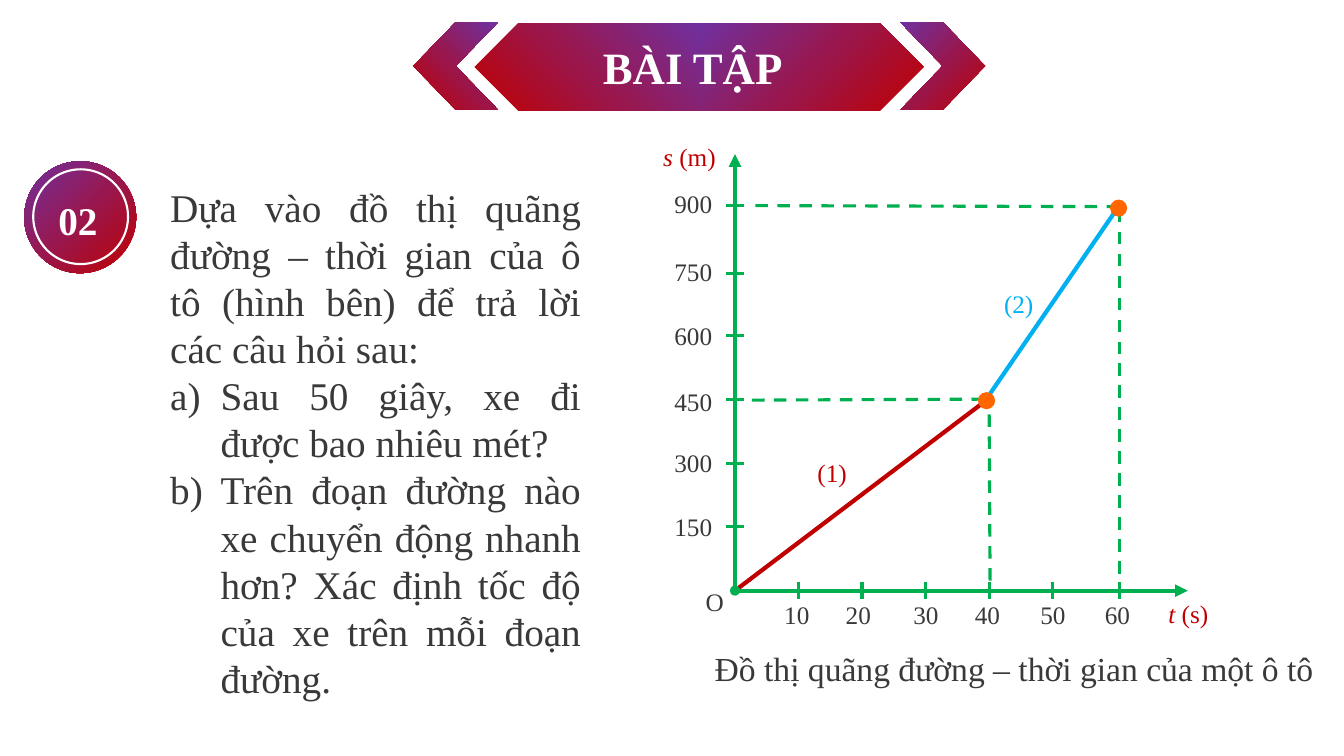
from dataclasses import dataclass

from copy import deepcopy
from lxml.etree import SubElement
from pptx import Presentation
from pptx.dml.color import RGBColor
from pptx.enum.dml import MSO_LINE
from pptx.enum.shapes import MSO_CONNECTOR, MSO_SHAPE
from pptx.enum.text import PP_ALIGN
from pptx.oxml.ns import qn
from pptx.util import Pt

SCALE = 9144


@dataclass(frozen=True)
class Theme:
    font: str = "Times New Roman"
    white: str = "FFFFFF"
    ink: str = "3B3838"
    red: str = "C00000"
    plum: str = "9B164A"
    purple: str = "7030A0"
    green: str = "00B050"
    blue: str = "00B0F0"
    orange: str = "FF6600"
    title: int = 32
    body: int = 28
    caption: int = 24
    label: int = 18
    thick: float = 3
    thin: float = 2.25
    ring: float = 1.5


class Painter:
    """Draws themed elements on one page, with lengths in hundredths of an inch."""

    def __init__(self, page, theme):
        self.page = page
        self.theme = theme

    def shape(self, kind, left, top, width, height, fill=None, outline=None, flip=False):
        box = [length * SCALE for length in (left, top, width, height)]
        shape = self.page.shapes.add_shape(kind, *box)
        shape.shadow.inherit = False
        if fill:
            shape.fill.solid()
            shape.fill.fore_color.rgb = RGBColor.from_string(fill)
        else:
            shape.fill.background()
        if outline:
            shape.line.color.rgb = RGBColor.from_string(outline)
            shape.line.width = Pt(self.theme.ring)
        else:
            shape.line.fill.background()
        if flip:
            shape.element.spPr.find(qn("a:xfrm")).set("flipH", "1")
        return shape

    def gradient_shape(self, kind, left, top, width, height, flip=False):
        fill = self.shape(kind, left, top, width, height, flip=flip).fill
        fill.gradient()
        fill.gradient_angle = 135
        stops = fill._fill._gradFill.find(qn("a:gsLst"))
        stops.insert(1, deepcopy(stops[0]))
        colors = (self.theme.red, self.theme.plum, self.theme.purple)
        for stop, position, color in zip(fill.gradient_stops, (0, 0.47, 1), colors):
            stop.position = position
            stop.color.rgb = RGBColor.from_string(color)

    def dot(self, center_x, center_y, size, color):
        corner = (center_x - size // 2, center_y - size // 2)
        self.shape(MSO_SHAPE.OVAL, *corner, size, size, color)

    def line(self, start, end, color, width, dashed=False, arrow=False):
        ends = [length * SCALE for length in (*start, *end)]
        line = self.page.shapes.add_connector(MSO_CONNECTOR.STRAIGHT, *ends)
        line.line.color.rgb = RGBColor.from_string(color)
        line.line.width = Pt(width)
        if dashed:
            line.line.dash_style = MSO_LINE.DASH
        if arrow:
            SubElement(line.line._get_or_add_ln(), qn("a:tailEnd"), type="triangle")
        SubElement(line.element.spPr, qn("a:effectLst"))

    def text(self, left, top, width, height, content, size, color, bold=False, variable=""):
        box = [length * SCALE for length in (left, top, width, height)]
        frame = self.page.shapes.add_textbox(*box).text_frame
        frame.word_wrap = True
        para = frame.paragraphs[0]
        if variable:
            span = para.add_run()
            span.text = variable
            span.font.italic = True
        para.add_run().text = content
        self.style(para, size, color, bold)
        return frame

    def style(self, para, size, color, bold=False):
        para.font.name = self.theme.font
        para.font.size = Pt(size)
        para.font.color.rgb = RGBColor.from_string(color)
        para.font.bold = bold

    def exercise(self, left, top, width, height, intro, questions):
        frame = self.text(left, top, width, height, intro, self.theme.body, self.theme.ink)
        for question in questions:
            para = frame.add_paragraph()
            para.add_run().text = question
            props = para._p.get_or_add_pPr()
            props.set("marL", str(50 * SCALE))
            props.set("indent", str(-50 * SCALE))
            SubElement(props, qn("a:buAutoNum"), type="alphaLcParenR")
            self.style(para, self.theme.body, self.theme.ink)
        for para in frame.paragraphs:
            para.alignment = PP_ALIGN.JUSTIFY


def draw_header(painter, theme):
    painter.gradient_shape(MSO_SHAPE.OVAL, 24, 160, 111, 111)
    painter.shape(MSO_SHAPE.OVAL, 33, 168, 94, 94, outline=theme.white)
    painter.text(48, 190, 64, 57, "02", theme.body, theme.white, bold=True)
    painter.gradient_shape(MSO_SHAPE.PENTAGON, 693, 23, 223, 87)
    painter.gradient_shape(MSO_SHAPE.PENTAGON, 471, 23, 223, 87, flip=True)
    painter.gradient_shape(MSO_SHAPE.CHEVRON, 893, 22, 84, 87)
    painter.gradient_shape(MSO_SHAPE.CHEVRON, 410, 22, 84, 87, flip=True)
    painter.text(588, 34, 211, 64, "BÀI TẬP", theme.title, theme.white, bold=True)


def draw_graph(painter, theme):
    origin, middle, finish = (729, 586), (981, 395), (1110, 204)
    painter.line(origin, middle, theme.red, theme.thick)
    painter.line(origin, (1178, 586), theme.green, theme.thick, arrow=True)
    painter.line(origin, (729, 153), theme.green, theme.thick, arrow=True)
    painter.dot(*origin, 10, theme.green)

    times = zip((792, 855, 918, 981, 1044, 1110), (768, 829, 896, 957, 1022, 1086))
    for step, (tick, left) in enumerate(times, 1):
        painter.line((tick, 577), (tick, 594), theme.green, theme.thin)
        painter.text(left, 590, 63, 40, str(10 * step), theme.label, theme.ink)
    distances = zip((522, 460, 396, 333, 271, 204), (502, 439, 378, 313, 249, 182))
    for step, (tick, top) in enumerate(distances, 1):
        painter.line((720, tick), (738, tick), theme.green, theme.thin)
        painter.text(659, top, 71, 40, str(150 * step), theme.label, theme.ink)

    guides = [
        ((982, 576), middle),
        ((976, 396), (739, 397)),
        ((1110, 569), (1110, 205)),
        ((1110, 205), (747, 204)),
    ]
    for start, end in guides:
        painter.line(start, end, theme.green, theme.thin, dashed=True)
    painter.line((981, 392), finish, theme.blue, theme.thick)
    for center in ((1109, 206), (978, 397)):
        painter.dot(*center, 17, theme.orange)

    painter.text(690, 577, 33, 40, "O", theme.label, theme.ink)
    painter.text(801, 449, 63, 40, "(1)", theme.label, theme.red)
    painter.text(986, 281, 63, 40, "(2)", theme.label, theme.blue)
    painter.text(1149, 589, 73, 40, "(s)", theme.label, theme.red, variable="t ")
    painter.text(648, 135, 90, 40, "(m)", theme.label, theme.red, variable="s ")
    caption = "Đồ thị quãng đường – thời gian của một ô tô"
    painter.text(699, 638, 646, 50, caption, theme.caption, theme.ink)


def main():
    deck = Presentation()
    deck.slide_width, deck.slide_height = 1333 * SCALE, 750 * SCALE
    page = deck.slides.add_slide(deck.slide_layouts[6])
    theme = Theme()
    painter = Painter(page, theme)
    draw_header(painter, theme)
    painter.exercise(
        159, 177, 427, 528,
        "Dựa vào đồ thị quãng đường – thời gian của ô tô (hình bên) để trả lời các câu hỏi sau:",
        [
            "Sau 50 giây, xe đi được bao nhiêu mét?",
            "Trên đoạn đường nào xe chuyển động nhanh hơn? "
            "Xác định tốc độ của xe trên mỗi đoạn đường.",
        ],
    )
    draw_graph(painter, theme)
    deck.save("out.pptx")


if __name__ == "__main__":
    main()
